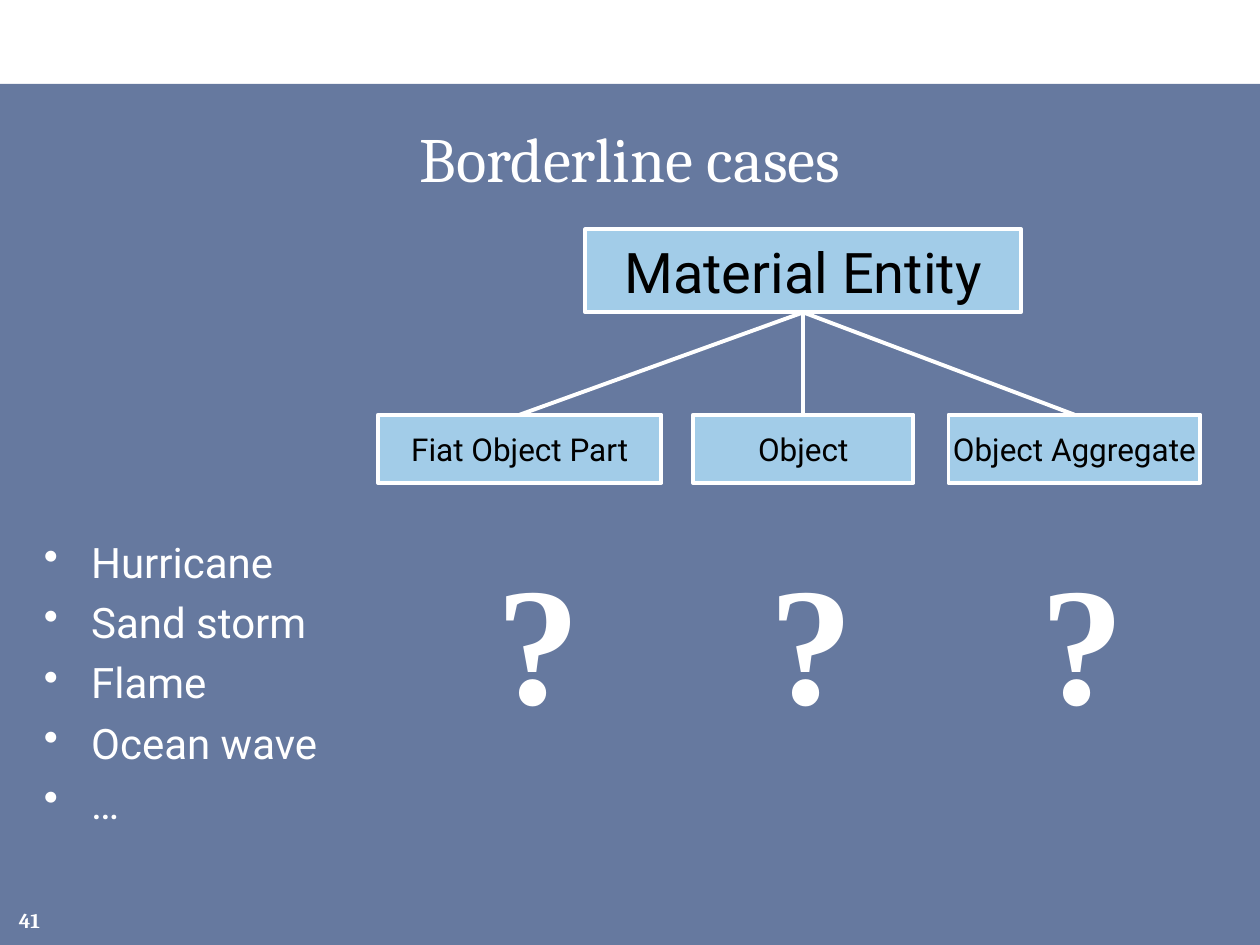
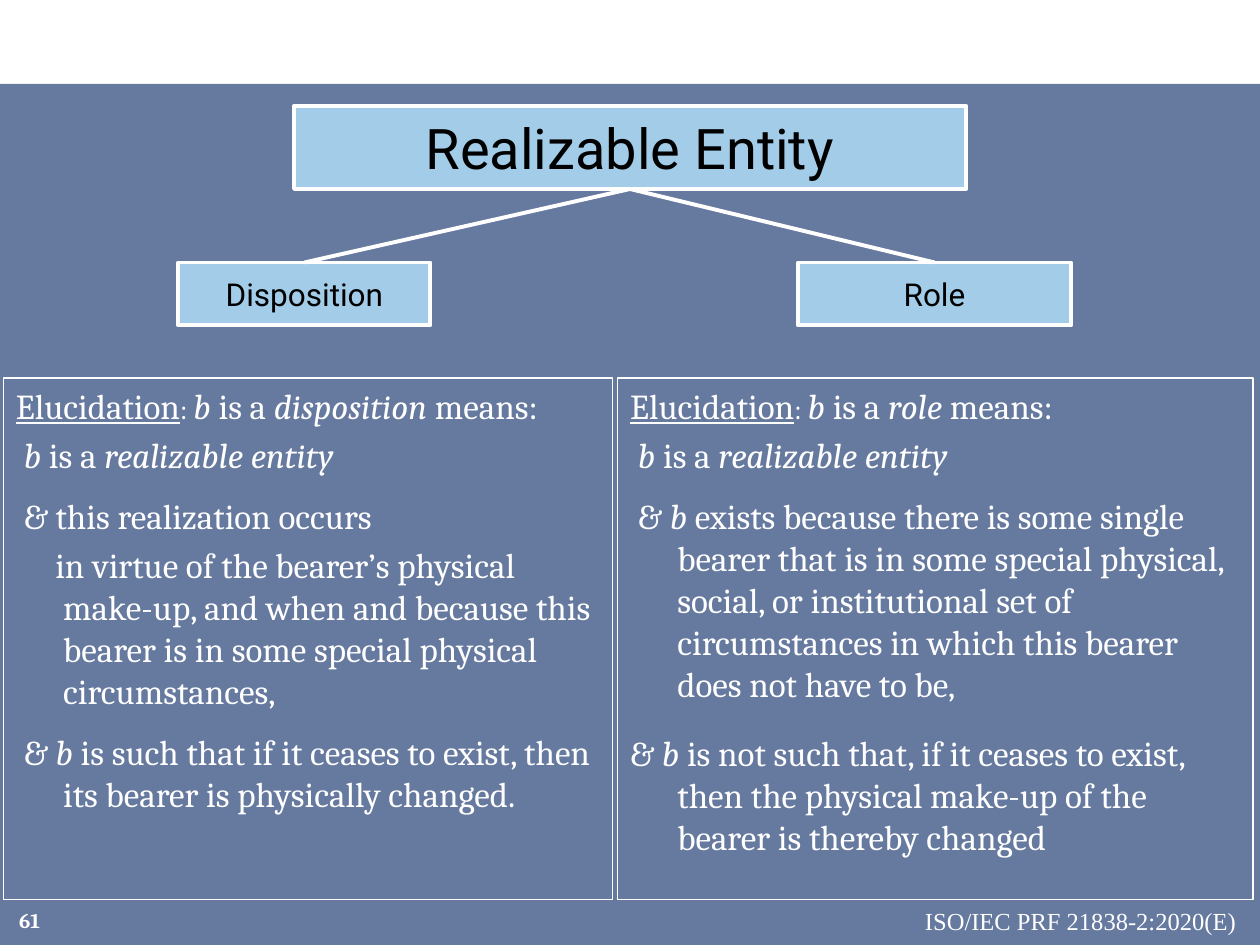
from dataclasses import dataclass

from lxml import etree
from pptx import Presentation
from pptx.dml.color import RGBColor
from pptx.enum.shapes import MSO_CONNECTOR, MSO_SHAPE
from pptx.enum.text import MSO_ANCHOR, PP_ALIGN
from pptx.oxml.ns import qn
from pptx.util import Pt

LEFT, CENTER, RIGHT = PP_ALIGN.LEFT, PP_ALIGN.CENTER, PP_ALIGN.RIGHT
TOP, MIDDLE = MSO_ANCHOR.TOP, MSO_ANCHOR.MIDDLE
RECTANGLE, STRAIGHT = MSO_SHAPE.RECTANGLE, MSO_CONNECTOR.STRAIGHT
BOTTOM_SITE, TOP_SITE = 2, 0


@dataclass(frozen=True)
class Theme:
    band: RGBColor = RGBColor(0x00, 0x20, 0x60)
    node: RGBColor = RGBColor(0xA2, 0xCC, 0xE8)
    white: RGBColor = RGBColor(0xFF, 0xFF, 0xFF)
    black: RGBColor = RGBColor(0x00, 0x00, 0x00)
    band_alpha: int = 60
    serif: str = "Cambria"
    sans: str = "Roboto"
    plain: str = "Times New Roman"
    title: int = 36
    root: int = 32
    child: int = 18
    bullet: int = 24
    definition: int = 20
    colon: int = 16
    mark: int = 96
    number: int = 12
    citation: int = 14
    node_line: float = 2.25
    panel_line: float = 0.75
    hanging: int = 27


THEME = Theme()
WIDTH, HEIGHT, BAND_TOP = 720, 540, 48

# Boxes are (left, top, width, height) in points.
BORDERLINE = {
    "number": "41",
    "title": "Borderline cases",
    "title_at": (18, 60, 684, 60),
    "root": "Material Entity",
    "root_at": (334.5, 131, 249, 47.5),
    "children": [("Fiat Object Part", 216, 162), ("Object", 396, 126),
                 ("Object Aggregate", 542, 144)],
    "row": (237, 39),
    "examples": ["Hurricane", "Sand storm", "Flame", "Ocean wave", "…"],
    "examples_at": (18, 303, 240, 219),
    "mark": "?",
    "mark_lefts": [276, 432, 587],
    "mark_row": (303, 63, 124),
}

# Each definition line is (text with *italics*, first-line shift, space before).
REALIZABLE = {
    "number": "61",
    "root": "Realizable Entity",
    "root_at": (168, 60.5, 384, 47.5),
    "children": [("Disposition", 102, 144), ("Role", 456, 156)],
    "row": (150, 36),
    "heading": "Elucidation",
    "panel_row": (216, 298),
    "panels": [
        (2, 348, [
            ("*b* is a *disposition* means:", 0, 0),
            ("*b* is a *realizable entity*", 4.5, 4),
            ("& this realization occurs", 4.5, 11),
            ("in virtue of the bearer’s physical make-up, and when and because "
             "this bearer is in some special physical circumstances,", 22.5, 4),
            ("& *b* is such that if it ceases to exist, then its bearer is "
             "physically changed.", 4.5, 11),
        ]),
        (353, 363, [
            ("*b* is a *role* means:", 0, 0),
            ("*b* is a *realizable entity*", 4.5, 4),
            ("& *b* exists because there is some single bearer that is in some "
             "special physical, social, or institutional set of circumstances "
             "in which this bearer does not have to be,", 4.5, 11),
            ("& *b* is not such that, if it ceases to exist, then the physical "
             "make-up of the bearer is thereby changed", 0, 15.5),
        ]),
    ],
    "citation": "ISO/IEC PRF 21838-2:2020(E)",
    "citation_at": (520, 514, 193.5, 24.5),
}


def points(*lengths):
    return [Pt(length) for length in lengths]


def place(box, at):
    box.left, box.top, box.width, box.height = points(*at)


def spans_of(text):
    """Split text at asterisks; every second part is italic."""
    return [(part, {"italic": i % 2 == 1})
            for i, part in enumerate(text.split("*")) if part]


def write(box, paragraphs, *, size, font, color=THEME.white, bold=False,
          align=LEFT, anchor=TOP, wrap=True, hanging=0, bullet=None, before=0):
    """Fill a box; a paragraph is a string or (spans, first-line shift, space before)."""
    frame = box.text_frame
    frame.word_wrap, frame.vertical_anchor = wrap, anchor
    for i, item in enumerate(paragraphs):
        if isinstance(item, str):
            item = ([(item, {})], 0, before if i else 0)
        spans, shift, gap = item
        para = frame.paragraphs[0] if i == 0 else frame.add_paragraph()
        props = para._p.get_or_add_pPr()
        if hanging:
            props.set("marL", str(Pt(hanging)))
            props.set("indent", str(Pt(shift - hanging)))
        if bullet:
            etree.SubElement(props, qn("a:buChar"), char=bullet)
        para.alignment, para.space_before = align, Pt(gap)
        for text, changes in spans:
            span = para.add_run()
            span.text = text
            style = {"size": Pt(size), "name": font, "bold": bold, **changes}
            for key, value in style.items():
                setattr(span.font, key, value)
            span.font.color.rgb = color


def add_text(page, at, paragraphs, **style):
    box = page.shapes.add_textbox(*points(*at))
    write(box, paragraphs, **style)
    return box


def outline(shape, width):
    shape.line.color.rgb = THEME.white
    shape.line.width = Pt(width)


def make_node(box, text, size):
    box.fill.solid()
    box.fill.fore_color.rgb = THEME.node
    outline(box, THEME.node_line)
    write(box, [text], size=size, font=THEME.sans, color=THEME.black,
          align=CENTER, anchor=MIDDLE, wrap=False)


def add_rectangle(page, at):
    box = page.shapes.add_shape(RECTANGLE, *points(*at))
    box.shadow.inherit = False
    return box


def add_children(page, root, children, row):
    top, height = row
    for text, left, width in children:
        child = add_rectangle(page, (left, top, width, height))
        make_node(child, text, THEME.child)
        link = page.shapes.add_connector(STRAIGHT, 0, 0, 0, 0)
        link.begin_connect(root, BOTTOM_SITE)
        link.end_connect(child, TOP_SITE)
        outline(link, THEME.node_line)
        etree.SubElement(link.element.spPr, qn("a:effectLst"))


def add_band(page, layout):
    """Draw the translucent band and move it to the layout, behind every slide."""
    band = add_rectangle(page, (0, BAND_TOP, WIDTH, HEIGHT - BAND_TOP))
    band.fill.solid()
    band.fill.fore_color.rgb = THEME.band
    band.line.fill.background()
    color = band.element.spPr.find(qn("a:solidFill"))[0]
    etree.SubElement(color, qn("a:alpha"), val=str(THEME.band_alpha * 1000))
    layout.shapes.element.insert(2, band.element)


def add_page(deck, layout, number):
    page = deck.slides.add_slide(layout)
    add_text(page, (0, 511, 30, 29), [number], size=THEME.number,
             font=THEME.serif, bold=True, align=RIGHT, anchor=MIDDLE, wrap=False)
    return page


def build_borderline(page, content):
    title = page.shapes.title
    place(title, content["title_at"])
    write(title, [content["title"]], size=THEME.title, font=THEME.serif,
          align=CENTER, anchor=MIDDLE)
    root = add_rectangle(page, content["root_at"])
    make_node(root, content["root"], THEME.root)
    add_children(page, root, content["children"], content["row"])
    add_text(page, content["examples_at"], content["examples"],
             size=THEME.bullet, font=THEME.sans, hanging=THEME.hanging,
             bullet="•", before=5.6)
    for left in content["mark_lefts"]:
        add_text(page, (left, *content["mark_row"][:1], *content["mark_row"][1:]),
                 [content["mark"]], size=THEME.mark, font=THEME.plain,
                 bold=True, align=CENTER, wrap=False)


def build_realizable(page, content):
    root = page.shapes.title
    place(root, content["root_at"])
    make_node(root, content["root"], THEME.root)
    add_children(page, root, content["children"], content["row"])
    heading = [(content["heading"], {"underline": True}),
               (": ", {"size": Pt(THEME.colon)})]
    top, height = content["panel_row"]
    for left, width, lines in content["panels"]:
        paragraphs = [((heading if i == 0 else []) + spans_of(text), shift, gap)
                      for i, (text, shift, gap) in enumerate(lines)]
        panel = add_text(page, (left, top, width, height), paragraphs,
                         size=THEME.definition, font=THEME.serif,
                         hanging=THEME.hanging)
        outline(panel, THEME.panel_line)
    add_text(page, content["citation_at"], [content["citation"]],
             size=THEME.citation, font=THEME.plain, align=RIGHT)


def main():
    deck = Presentation()
    deck.slide_width, deck.slide_height = points(WIDTH, HEIGHT)
    layout = deck.slide_layouts.get_by_name("Title Only")
    borderline = add_page(deck, layout, BORDERLINE["number"])
    add_band(borderline, layout)
    build_borderline(borderline, BORDERLINE)
    build_realizable(add_page(deck, layout, REALIZABLE["number"]), REALIZABLE)
    deck.save("out.pptx")


if __name__ == "__main__":
    main()
